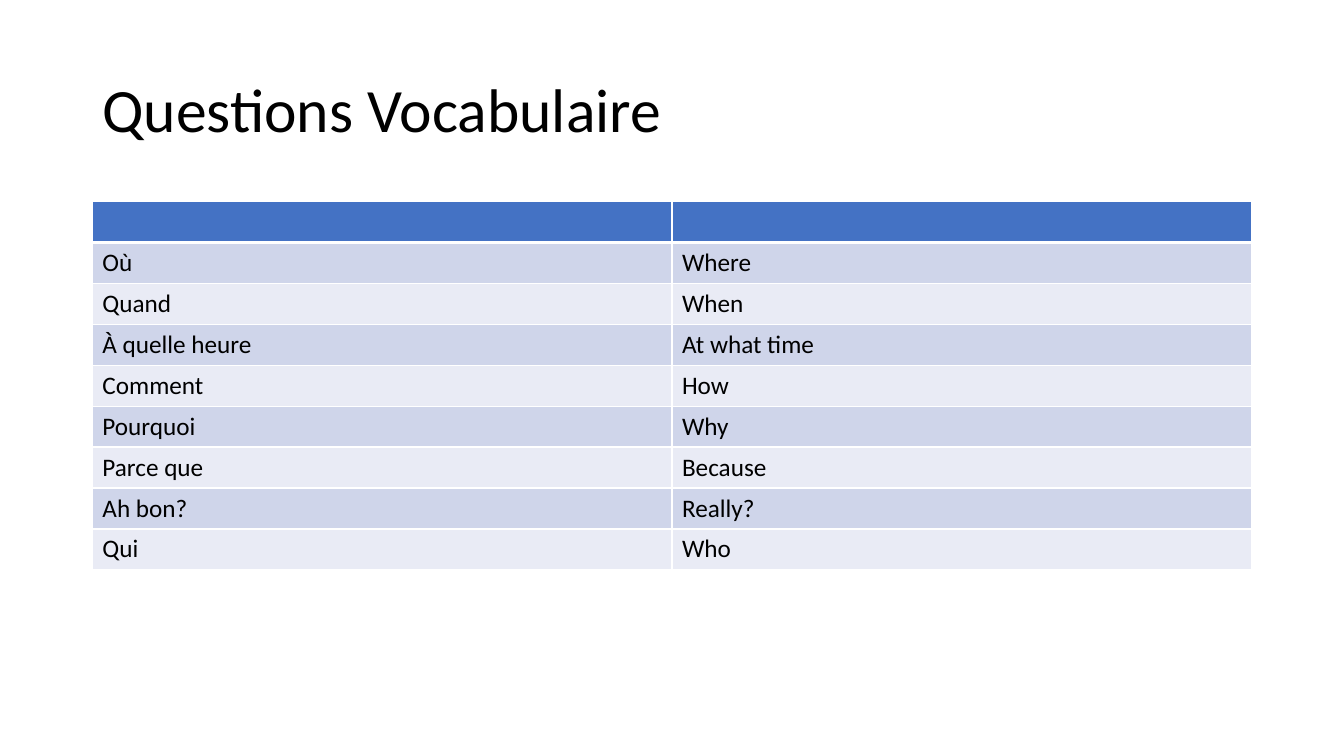
from dataclasses import dataclass

from lxml.etree import SubElement
from pptx import Presentation
from pptx.dml.color import RGBColor
from pptx.enum.text import MSO_ANCHOR, PP_ALIGN
from pptx.oxml.ns import qn
from pptx.slide import Slide
from pptx.table import _Cell as Cell
from pptx.text.text import _Paragraph as Paragraph
from pptx.util import Emu, Pt

EMU_PER_PX = 9525


@dataclass(frozen=True)
class Theme:
    font: str = "Calibri"
    text: str = "000000"
    rule: str = "FFFFFF"
    header: str = "4472C4"
    bands: tuple[str, str] = ("CFD5EA", "E9EBF5")
    title_size: int = 44
    body_size: int = 18
    thin_rule: int = 1
    thick_rule: int = 3


@dataclass(frozen=True)
class Box:
    left: int
    top: int
    width: int
    height: int

    def emu(self) -> tuple[Emu, Emu, Emu, Emu]:
        return px(self.left), px(self.top), px(self.width), px(self.height)


@dataclass(frozen=True)
class Entry:
    french: str
    english: str


THEME = Theme()
ROW_HEIGHT = 39
TITLE_BOX = Box(88, 38, 1104, 139)
ENTRIES = [
    Entry("Où", "Where"),
    Entry("Quand", "When"),
    Entry("À quelle heure", "At what time"),
    Entry("Comment", "How"),
    Entry("Pourquoi", "Why"),
    Entry("Parce que", "Because"),
    Entry("Ah bon?", "Really?"),
    Entry("Qui", "Who"),
]
TABLE_BOX = Box(88, 192, 1104, ROW_HEIGHT * (len(ENTRIES) + 1))


def px(n: int) -> Emu:
    return Emu(n * EMU_PER_PX)


def format_runs(p: Paragraph, size: int) -> None:
    for r in p.runs:
        r.font.name = THEME.font
        r.font.size = Pt(size)
        r.font.color.rgb = RGBColor.from_string(THEME.text)


def add_title(slide: Slide, text: str) -> None:
    sp = slide.shapes.title
    sp.left, sp.top, sp.width, sp.height = TITLE_BOX.emu()
    tf = sp.text_frame
    tf.text = text
    tf.word_wrap = True
    tf.vertical_anchor = MSO_ANCHOR.MIDDLE
    p = tf.paragraphs[0]
    p.alignment = PP_ALIGN.LEFT
    p.line_spacing = 0.9
    format_runs(p, THEME.title_size)


def set_borders(cell: Cell, top: int, bottom: int) -> None:
    widths = {"L": THEME.thin_rule, "R": THEME.thin_rule, "T": top, "B": bottom}
    tc_pr = cell._tc.get_or_add_tcPr()
    for side, width in widths.items():
        ln = SubElement(tc_pr, qn(f"a:ln{side}"), w=str(Pt(width)))
        fill = SubElement(ln, qn("a:solidFill"))
        SubElement(fill, qn("a:srgbClr"), val=THEME.rule)


def style_cell(cell: Cell, row: int) -> None:
    # The thick rule lies between the header and the first entry
    top = THEME.thick_rule if row == 1 else THEME.thin_rule
    bottom = THEME.thick_rule if row == 0 else THEME.thin_rule
    set_borders(cell, top, bottom)
    color = THEME.bands[(row - 1) % 2] if row else THEME.header
    cell.fill.solid()
    cell.fill.fore_color.rgb = RGBColor.from_string(color)


def add_vocabulary(slide: Slide, entries: list[Entry]) -> None:
    frame = slide.shapes.add_table(len(entries) + 1, 2, *TABLE_BOX.emu())
    table = frame.table
    for row in table.rows:
        row.height = px(ROW_HEIGHT)

    # Words under an empty header row
    for i, entry in enumerate(entries, start=1):
        for j, word in enumerate((entry.french, entry.english)):
            tf = table.cell(i, j).text_frame
            tf.text = word
            format_runs(tf.paragraphs[0], THEME.body_size)

    # Fills and rules
    for i, row in enumerate(table.rows):
        for cell in row.cells:
            style_cell(cell, i)


def main() -> None:
    prs = Presentation()
    prs.slide_width, prs.slide_height = px(1280), px(720)
    slide = prs.slides.add_slide(prs.slide_layouts[5])
    add_title(slide, "Questions Vocabulaire")
    add_vocabulary(slide, ENTRIES)
    prs.save("out.pptx")


if __name__ == "__main__":
    main()
